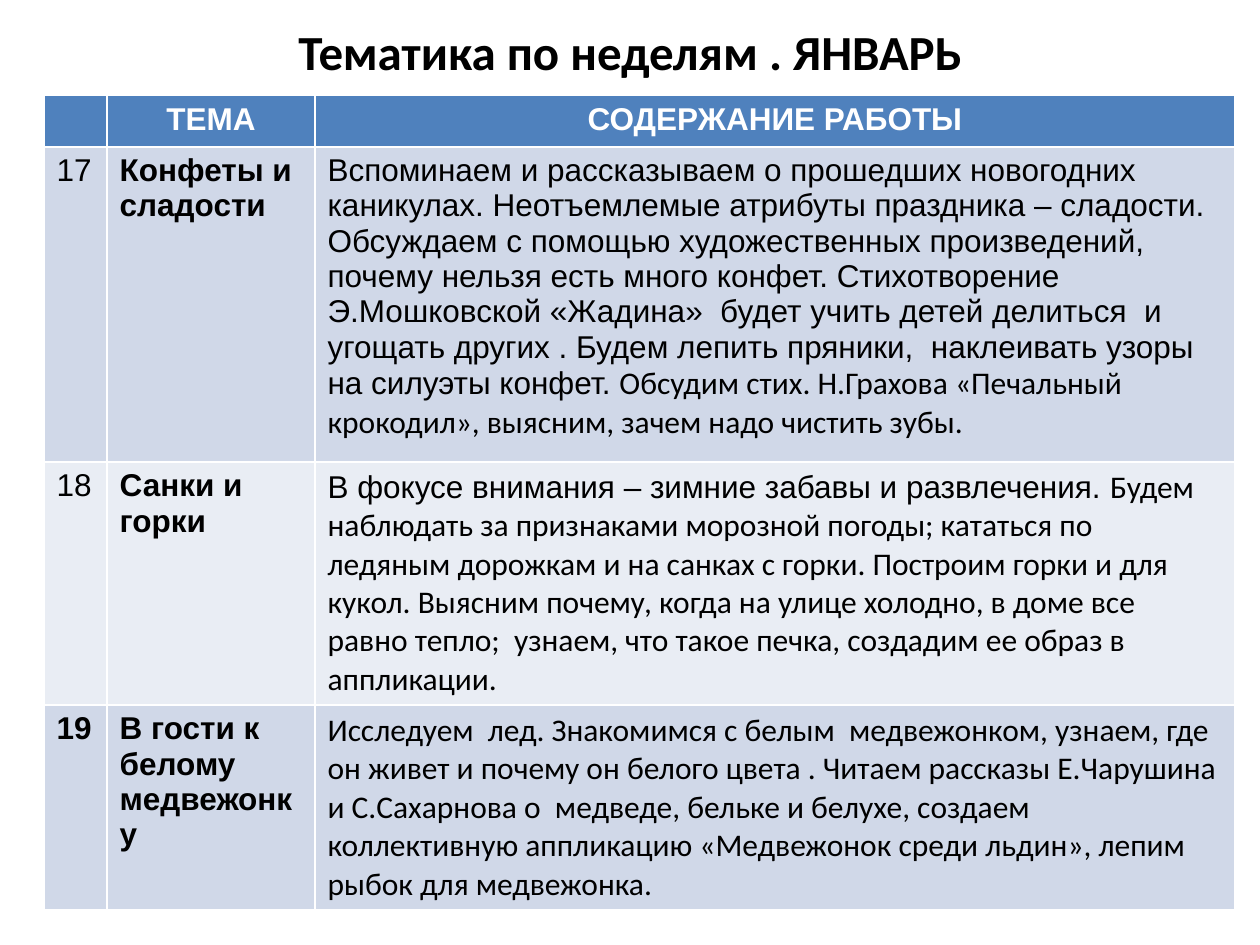
from pptx import Presentation
from pptx.dml.color import RGBColor
from pptx.enum.text import MSO_ANCHOR, PP_ALIGN
from pptx.util import Pt

CENTER, LEFT = PP_ALIGN.CENTER, PP_ALIGN.LEFT
MIDDLE = MSO_ANCHOR.MIDDLE

# Content: each cell is a list of (text, format) spans
TITLE = "Тематика по неделям . ЯНВАРЬ"
ARIAL = {"name": "Arial", "size": Pt(18), "bold": False}
BOLD = {**ARIAL, "bold": True}
CALIBRI = {**ARIAL, "name": "Calibri"}
HEADING = {"name": "Calibri", "size": Pt(28), "bold": True}

ROWS = [
    [[], [("ТЕМА", BOLD)], [("СОДЕРЖАНИЕ РАБОТЫ", BOLD)]],
    [
        [("17", ARIAL)],
        [("Конфеты и сладости", BOLD)],
        [("Вспоминаем и рассказываем о прошедших новогодних каникулах. "
          "Неотъемлемые атрибуты праздника – сладости. Обсуждаем с помощью "
          "художественных произведений, почему нельзя есть много конфет. "
          "Стихотворение Э.Мошковской «Жадина»  будет учить детей делиться  и "
          "угощать других . Будем лепить пряники,  наклеивать узоры на силуэты "
          "конфет. ", ARIAL),
         ("Обсудим стих. Н.Грахова «Печальный крокодил», выясним, зачем надо "
          "чистить зубы.", CALIBRI)],
    ],
    [
        [("18", ARIAL)],
        [("Санки и горки", BOLD)],
        [("В фокусе внимания – зимние забавы и развлечения. ", ARIAL),
         ("Будем наблюдать за признаками морозной погоды; кататься по ледяным "
          "дорожкам и на санках с горки. Построим горки и для кукол. Выясним "
          "почему, когда на улице холодно, в доме все равно тепло;  узнаем, что "
          "такое печка, создадим ее образ в аппликации.", CALIBRI)],
    ],
    [
        [("19", BOLD)],
        [("В гости к белому медвежонку", BOLD)],
        [("Исследуем  лед. Знакомимся с белым  медвежонком, узнаем, где он живет "
          "и почему он белого цвета . Читаем рассказы Е.Чарушина и С.Сахарнова о  "
          "медведе, бельке и белухе, создаем коллективную аппликацию «Медвежонок "
          "среди льдин», лепим  рыбок для медвежонка.", CALIBRI)],
    ],
]
COLUMN_WIDTHS = [36, 118.8, 525.6]
ROW_HEIGHTS = [29.2, 171.5, 139, 117]
HEADER_FILL, BAND_FILLS = "4F81BD", ["E9EDF4", "D0D8E8"]
BLACK, WHITE = "000000", "FFFFFF"


def color(value):
    return RGBColor.from_string(value)


def write(para, spans, ink, align):
    para.alignment = align
    for text, style in spans:
        span = para.add_run()
        span.text = text
        span.font.color.rgb = color(ink)
        for key, value in style.items():
            setattr(span.font, key, value)


deck = Presentation()
deck.slide_width, deck.slide_height = Pt(720), Pt(540)
page = deck.slides.add_slide(deck.slide_layouts[6])

# Title
box = page.shapes.add_textbox(Pt(36), Pt(9.4), Pt(648), Pt(39.6))
box.text_frame.word_wrap = True
box.text_frame.vertical_anchor = MIDDLE
write(box.text_frame.paragraphs[0], [(TITLE, HEADING)], BLACK, CENTER)

# Weekly plan; the table style supplies the white cell borders
table = page.shapes.add_table(
    len(ROWS), len(COLUMN_WIDTHS), Pt(25.2), Pt(54.7),
    Pt(sum(COLUMN_WIDTHS)), Pt(sum(ROW_HEIGHTS))).table
for column, width in zip(table.columns, COLUMN_WIDTHS):
    column.width = Pt(width)
for index, (row, height, cells) in enumerate(zip(table.rows, ROW_HEIGHTS, ROWS)):
    row.height = Pt(height)
    header = index == 0
    for cell, spans in zip(row.cells, cells):
        cell.fill.solid()
        cell.fill.fore_color.rgb = color(HEADER_FILL if header else BAND_FILLS[index % 2])
        write(cell.text_frame.paragraphs[0], spans,
              WHITE if header else BLACK, CENTER if header else LEFT)

deck.save("out.pptx")
